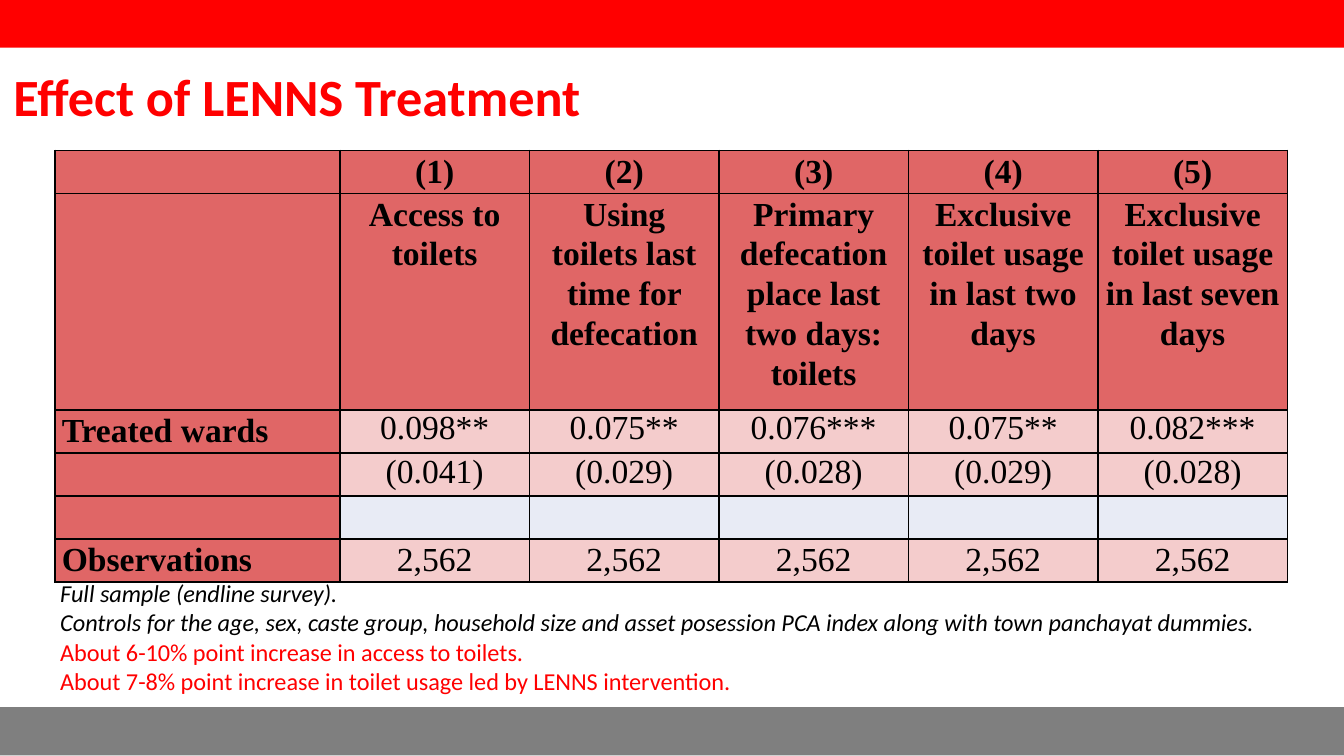
from dataclasses import dataclass

import pptx
import pptx.dml.color
import pptx.enum.shapes
import pptx.enum.text
import pptx.oxml
import pptx.oxml.ns
import pptx.util

WIDTH = 10
HEIGHT = WIDTH * 9 / 16
RED, GRAY, BLACK = "FF0000", "7F7F7F", "000000"
HEADER, VALUE, EMPTY = "E06666", "F4CCCC", "E8EBF5"
COLUMNS = [2.12] + [1.41] * 5
ROWS = [0.32, 1.61] + [0.32] * 4
CENTER = pptx.enum.text.PP_ALIGN.CENTER


@dataclass
class PercentBox:
    left: float
    top: float
    width: float
    height: float

    def emu(self) -> list:
        return [
            pptx.util.Inches(self.left * WIDTH / 100),
            pptx.util.Inches(self.top * HEIGHT / 100),
            pptx.util.Inches(self.width * WIDTH / 100),
            pptx.util.Inches(self.height * HEIGHT / 100),
        ]


@dataclass
class Style:
    size: float
    font: str = "Calibri"
    color: str = BLACK
    bold: bool = False
    italic: bool = False


@dataclass
class Line:
    text: str
    style: Style


@dataclass
class Band:
    box: PercentBox
    color: str


BANDS = [
    Band(PercentBox(-0.2, -0.1, 100.4, 6.4), RED),
    Band(PercentBox(-0.2, 93.55, 100.2, 6.4), GRAY),
]
TITLE = Line("Effect of LENNS Treatment", Style(28, color=RED, bold=True))
SAMPLE = Style(13, italic=True)
FINDING = Style(13, color=RED)
NOTES = [
    Line("Full sample (endline survey).", SAMPLE),
    Line("Controls for the age, sex, caste group, household size and asset posession "
         "PCA index along with town panchayat dummies.", SAMPLE),
    Line("About 6-10% point increase in access to toilets.", FINDING),
    Line("About 7-8% point increase in toilet usage led by LENNS intervention.", FINDING),
]
RESULTS = [
    ["", "(1)", "(2)", "(3)", "(4)", "(5)"],
    ["", "Access to toilets", "Using toilets last time for defecation",
     "Primary defecation place last two days: toilets",
     "Exclusive toilet usage in last two days",
     "Exclusive toilet usage in last seven days"],
    ["Treated wards", "0.098**", "0.075**", "0.076***", "0.075**", "0.082***"],
    ["", "(0.041)", "(0.029)", "(0.028)", "(0.029)", "(0.028)"],
    [""] * 6,
    ["Observations"] + ["2,562"] * 5,
]


def rgb(color: str) -> pptx.dml.color.RGBColor:
    return pptx.dml.color.RGBColor.from_string(color)


def add_run(p, line: Line) -> None:
    r = p.add_run()
    r.text = line.text
    r.font.size = pptx.util.Pt(line.style.size)
    r.font.name = line.style.font
    r.font.bold = line.style.bold
    r.font.italic = line.style.italic
    r.font.color.rgb = rgb(line.style.color)


def set_margins(target, side: float, end: float) -> None:
    target.margin_left = target.margin_right = pptx.util.Inches(side)
    target.margin_top = target.margin_bottom = pptx.util.Inches(end)


def draw_band(s, band: Band) -> None:
    sp = s.shapes.add_shape(pptx.enum.shapes.MSO_SHAPE.RECTANGLE, *band.box.emu())
    sp.shadow.inherit = False
    sp.fill.solid()
    sp.fill.fore_color.rgb = rgb(band.color)
    sp.line.fill.background()


def draw_text(s, box: PercentBox, lines: list[Line], side: float, end: float) -> None:
    tf = s.shapes.add_textbox(*box.emu()).text_frame
    tf.word_wrap = True
    set_margins(tf, side, end)
    for i, line in enumerate(lines):
        p = tf.add_paragraph() if i else tf.paragraphs[0]
        add_run(p, line)


def add_borders(cell) -> None:
    properties = cell._tc.get_or_add_tcPr()
    for position, side in enumerate(("lnL", "lnR", "lnT", "lnB")):
        properties.insert(position, pptx.oxml.parse_xml(
            f'<a:{side} {pptx.oxml.ns.nsdecls("a")} w="12700"><a:solidFill>'
            f'<a:srgbClr val="{BLACK}"/></a:solidFill></a:{side}>'))


def draw_cell(cell, row: int, column: int, text: str) -> None:
    is_header = row < 2 or column == 0
    is_estimate = row in (2, 3) and column > 0
    set_margins(cell, 0.07 if is_estimate else 0.05, 0)
    cell.fill.solid()
    cell.fill.fore_color.rgb = rgb(HEADER if is_header else VALUE if text else EMPTY)
    add_borders(cell)
    if text:
        p = cell.text_frame.paragraphs[0]
        if column:
            p.alignment = CENTER
        if not is_estimate:
            p.line_spacing = 1.07
        add_run(p, Line(text, Style(18, "Times New Roman", bold=is_header)))


def draw_table(s, left: float, top: float) -> None:
    box = PercentBox(left, top, 100 * sum(COLUMNS) / WIDTH, 100 * sum(ROWS) / HEIGHT)
    table = s.shapes.add_table(len(ROWS), len(COLUMNS), *box.emu()).table
    table.first_row = table.horz_banding = False
    for column, width in zip(table.columns, COLUMNS):
        column.width = pptx.util.Inches(width)
    for row, height in zip(table.rows, ROWS):
        row.height = pptx.util.Inches(height)
    for i, texts in enumerate(RESULTS):
        for j, text in enumerate(texts):
            draw_cell(table.cell(i, j), i, j, text)


def main() -> None:
    prs = pptx.Presentation()
    prs.slide_width = pptx.util.Inches(WIDTH)
    prs.slide_height = pptx.util.Inches(HEIGHT)
    s = prs.slides.add_slide(prs.slide_layouts[6])
    for band in BANDS:
        draw_band(s, band)
    draw_text(s, PercentBox(0.3, 7.8, 99.5, 13.5), [TITLE], 0.07, 0.04)
    draw_text(s, PercentBox(3.5, 74.75, 96, 23.1), NOTES, 0.1, 0.1)
    draw_table(s, 4.1, 19.9)
    prs.save("out.pptx")


if __name__ == "__main__":
    main()
